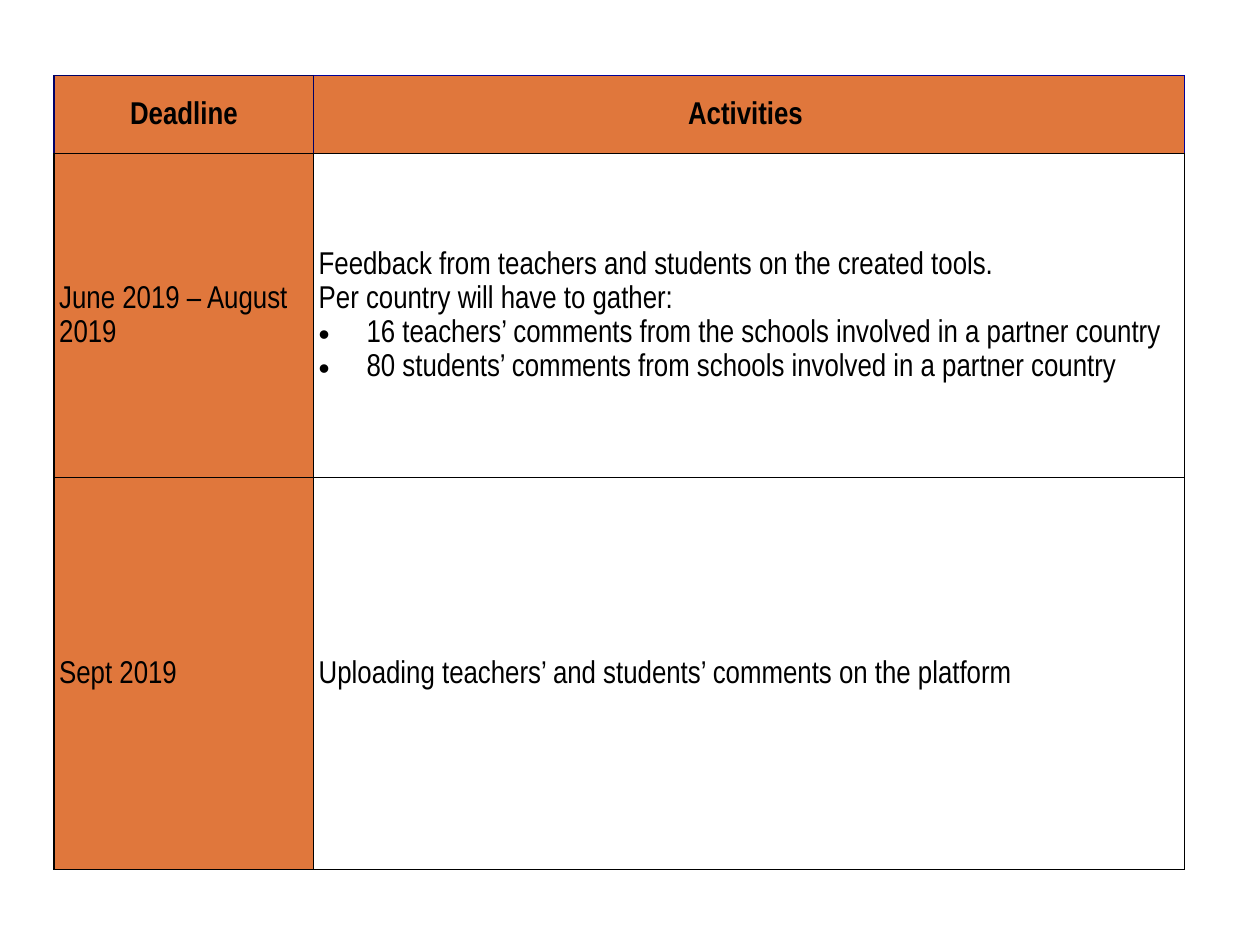
from dataclasses import dataclass

from lxml import etree
from pptx import Presentation
from pptx import util as u
from pptx.dml import color
from pptx.enum import text as t
from pptx.oxml import ns

FONT = "Arial Narrow"
BLACK, NAVY, BLUE, ORANGE = "000000", "000066", "000099", "E0773C"
LEFT, MID, JUST = t.PP_ALIGN.LEFT, t.PP_ALIGN.CENTER, t.PP_ALIGN.JUSTIFY


@dataclass
class Item:
    """One table cell; edges are the left, right, top and bottom colours."""
    lines: tuple[str, ...]
    fill: str | None = None
    align: t.PP_ALIGN = LEFT
    bold: bool = False
    edges: tuple[str, ...] = (BLACK,) * 4
    plain: int = 2  # lines before the bullets start


COLS = (2.06, 6.91)
ROWS = (0.62, 2.57, 3.11)
GRID = (
    (
        Item(("Deadline",), ORANGE, MID, True, (NAVY, NAVY, NAVY, BLACK)),
        Item(("Activities ",), ORANGE, MID, True, (NAVY, BLUE, BLUE, BLACK)),
    ),
    (
        Item(("June 2019 – August 2019",), ORANGE),
        Item((
            "Feedback from teachers and students on the created tools.",
            "Per country will have to gather:",
            "16 teachers’ comments from the schools involved in a partner country ",
            "80 students’ comments from schools involved in a partner country ",
        ), align=JUST),
    ),
    (
        Item(("Sept 2019",), ORANGE),
        Item(("Uploading teachers’ and students’ comments on the platform",),
             align=JUST),
    ),
)


def rgb(code: str) -> color.RGBColor:
    return color.RGBColor.from_string(code)


def write(para, words: str, *, align=LEFT, bold=False, bullet=False) -> None:
    if bullet:
        props = para._p.get_or_add_pPr()
        props.set("marL", str(u.Inches(0.38)))
        props.set("indent", str(u.Inches(-0.38)))
        etree.SubElement(props, ns.qn("a:buFont"), typeface="Arial")
        etree.SubElement(props, ns.qn("a:buChar"), char="•")
    para.alignment = align
    para.line_spacing = 1.15
    run = para.add_run()
    run.text = words
    font = run.font
    font.name, font.size, font.bold = FONT, u.Pt(18), bold
    font.color.rgb = rgb(BLACK)


def border(cell, edges: tuple[str, ...]) -> None:
    props = cell._tc.get_or_add_tcPr()
    for pos, (side, code) in enumerate(zip("LRTB", edges)):
        line = etree.Element(ns.qn("a:ln" + side), w=str(u.Pt(1)))
        fill = etree.SubElement(line, ns.qn("a:solidFill"))
        etree.SubElement(fill, ns.qn("a:srgbClr"), val=code)
        props.insert(pos, line)


def draw(cell, item: Item) -> None:
    cell.vertical_anchor = t.MSO_ANCHOR.MIDDLE
    cell.margin_left = cell.margin_right = u.Inches(0.04)
    cell.margin_top = cell.margin_bottom = 0
    if item.fill:
        cell.fill.solid()
        cell.fill.fore_color.rgb = rgb(item.fill)
    else:
        cell.fill.background()
    border(cell, item.edges)
    frame = cell.text_frame
    for n, words in enumerate(item.lines):
        para = frame.add_paragraph() if n else frame.paragraphs[0]
        write(para, words, align=item.align, bold=item.bold,
              bullet=n >= item.plain)


def main() -> None:
    deck = Presentation()
    deck.slide_width, deck.slide_height = u.Inches(10), u.Inches(7.5)
    slide = deck.slides.add_slide(deck.slide_layouts[6])

    # Timetable grid
    table = slide.shapes.add_table(
        len(ROWS), len(COLS), u.Inches(0.43), u.Inches(0.6),
        u.Inches(sum(COLS)), u.Inches(sum(ROWS))).table
    table.first_row = table.horz_banding = False
    for col, width in zip(table.columns, COLS):
        col.width = u.Inches(width)
    for row, height in zip(table.rows, ROWS):
        row.height = u.Inches(height)

    # Deadlines and activities
    for row, items in zip(table.rows, GRID):
        for cell, item in zip(row.cells, items):
            draw(cell, item)

    deck.save("out.pptx")


if __name__ == "__main__":
    main()
